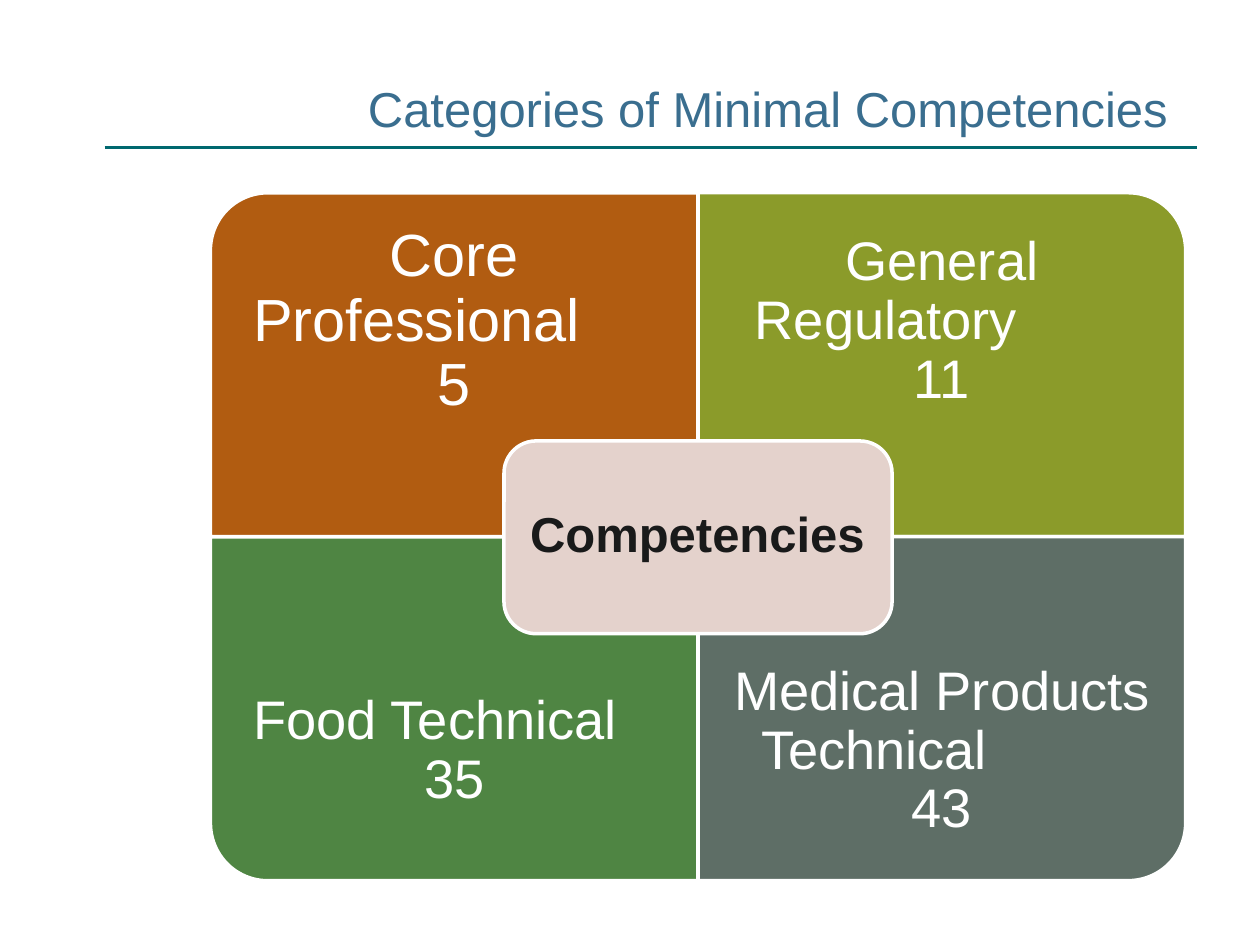
from lxml import etree
from pptx import Presentation
from pptx.dml.color import RGBColor
from pptx.enum.shapes import MSO_CONNECTOR, MSO_SHAPE
from pptx.enum.text import MSO_ANCHOR as Anchor, PP_ALIGN as Align
from pptx.oxml.ns import qn
from pptx.util import Inches, Pt

COLORS = {
    "title": "3A6E8F",
    "rule": "00686F",
    "core": "B15C11",
    "general": "8B9B2A",
    "food": "4F8543",
    "medical": "5E6E66",
    "center": "E4D2CC",
    "dark": "191A1A",
    "white": "FFFFFF",
}
FONT = "Arial"
GRID_LEFT, GRID_TOP = 1.67, 1.53
CELL_W, CELL_H = 3.87, 2.73
LABEL_H = 2.05

# color, column, row, rotation, size, inset, lines, (line to indent, indent)
CATEGORIES = [
    ("core", 0, 0, 270, 34, 0.26, ["Core", "Professional", "5"], (1, 0.08)),
    ("general", 1, 0, 0, 31, 0.24, ["General", "Regulatory", "11"], (1, 0.21)),
    ("food", 0, 1, 180, 31, 0.24, ["Food Technical", "35"], (0, 0.1)),
    ("medical", 1, 1, 90, 31, 0.24, ["Medical Products", "Technical", "43"], (1, 0.26)),
]


def rgb(name):
    return RGBColor.from_string(COLORS[name])


def add_panel(slide, preset, left, top, width, height, color, rotation=0):
    """Add a white-edged panel; left, top, width and height are as seen after rotation."""
    center_x, center_y = left + width / 2, top + height / 2
    if rotation in (90, 270):
        width, height = height, width
    panel = slide.shapes.add_shape(
        preset, Inches(center_x - width / 2), Inches(center_y - height / 2),
        Inches(width), Inches(height))
    panel.rotation = rotation
    panel.shadow.inherit = False
    panel.fill.solid()
    panel.fill.fore_color.rgb = rgb(color)
    panel.line.color.rgb = rgb("white")
    panel.line.width = Pt(2)


def add_label(slide, left, top, width, height, lines, size, color, inset=0,
              anchor=Anchor.MIDDLE, align=Align.CENTER, spacing=0.9, bold=False):
    label = slide.shapes.add_textbox(
        Inches(left), Inches(top), Inches(width), Inches(height))
    frame = label.text_frame
    frame.word_wrap = True
    frame.vertical_anchor = anchor
    frame.margin_left = frame.margin_right = Inches(inset)
    frame.margin_top = frame.margin_bottom = Inches(inset)
    frame.text = "\n".join(lines)
    for paragraph in frame.paragraphs:
        paragraph.alignment = align
        paragraph.line_spacing = spacing
        for run in paragraph.runs:
            run.font.name = FONT
            run.font.size = Pt(size)
            run.font.bold = bold
            run.font.color.rgb = rgb(color)
    return frame


def indent_left(paragraph, indent):
    paragraph.alignment = Align.LEFT
    properties = paragraph._p.get_or_add_pPr()
    properties.set("marL", str(Inches(indent)))
    properties.set("indent", "0")


def add_rule(slide, left, right, y):
    rule = slide.shapes.add_connector(
        MSO_CONNECTOR.STRAIGHT, Inches(left), Inches(y), Inches(right), Inches(y))
    rule.line.color.rgb = rgb("rule")
    rule.line.width = Pt(1.75)
    etree.SubElement(rule._element.spPr, qn("a:effectLst"))


def add_category(slide, color, column, row, rotation, size, inset, lines, indented):
    left = GRID_LEFT + column * CELL_W
    top = GRID_TOP + row * CELL_H
    add_panel(slide, MSO_SHAPE.ROUND_1_RECTANGLE, left, top, CELL_W, CELL_H,
              color, rotation)
    label_top = top + row * (CELL_H - LABEL_H)
    frame = add_label(slide, left, label_top, CELL_W, LABEL_H, lines, size,
                      "white", inset)
    line, indent = indented
    indent_left(frame.paragraphs[line], indent)


def main():
    deck = Presentation()
    deck.slide_width, deck.slide_height = Inches(10), Inches(7.5)
    slide = deck.slides.add_slide(deck.slide_layouts[6])

    add_rule(slide, 0.83, 9.5, 1.17)
    add_label(slide, 2.92, 0.42, 6.42, 0.67, ["Categories of Minimal Competencies"],
              28, "title", anchor=Anchor.BOTTOM, align=Align.LEFT, spacing=Pt(34))
    for category in CATEGORIES:
        add_category(slide, *category)
    add_panel(slide, MSO_SHAPE.ROUNDED_RECTANGLE, 4, 3.5, 3.08, 1.53, "center")
    add_label(slide, 4.07, 3.57, 2.93, 1.38, ["Competencies"], 28, "dark", 0.12,
              bold=True)

    deck.save("out.pptx")


if __name__ == "__main__":
    main()
